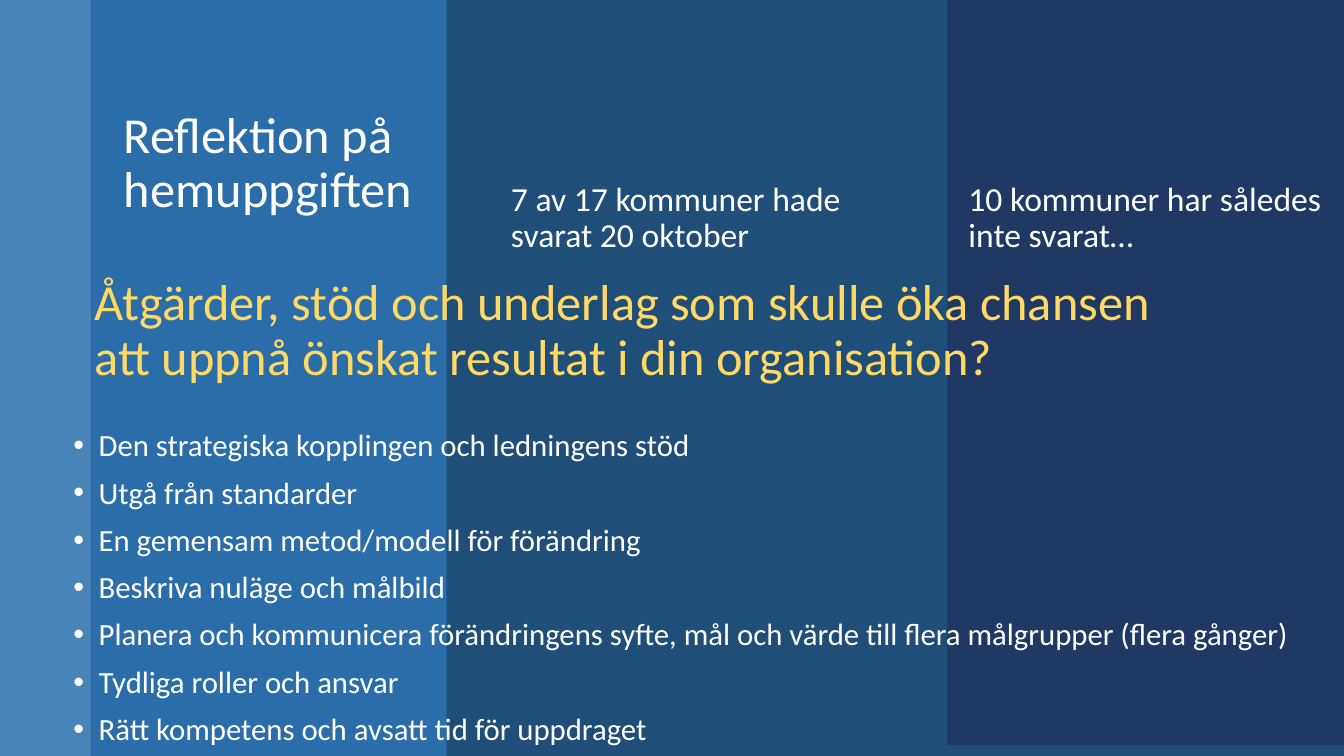
from dataclasses import dataclass

from lxml import etree
from pptx import Presentation
from pptx import util as u
from pptx.dml.color import RGBColor
from pptx.enum import shapes, text
from pptx.oxml import ns

Pt = u.Pt


@dataclass(frozen=True)
class Theme:
    font: str = "Calibri"
    back: str = "1F4E79"
    edge: str = "5B9BD5"
    main: str = "2E75B6"
    dark: str = "203864"
    ink: str = "FFFFFF"
    gold: str = "FFD966"
    head: int = 36
    note: int = 24
    item: int = 22


T = Theme()
ITEMS = [
    "Den strategiska kopplingen och ledningens stöd",
    "Utgå från standarder",
    "En gemensam metod/modell för förändring",
    "Beskriva nuläge och målbild",
    "Planera och kommunicera förändringens syfte, mål och värde till flera målgrupper (flera gånger)",
    "Tydliga roller och ansvar",
    "Rätt kompetens och avsatt tid för uppdraget",
]


def add_band(slide, box, color, alpha=100):
    band = slide.shapes.add_shape(shapes.MSO_SHAPE.RECTANGLE, *map(Pt, box))
    band.shadow.inherit = False
    band.line.fill.background()
    band.fill.solid()
    band.fill.fore_color.rgb = RGBColor.from_string(color)
    if alpha < 100:
        tint = band.fill._xPr.find(".//" + ns.qn("a:srgbClr"))
        etree.SubElement(tint, ns.qn("a:alpha"), val=str(alpha * 1000))


def add_dot(para, indent):
    props = para._p.get_or_add_pPr()
    props.set("marL", str(Pt(indent)))
    props.set("indent", str(-Pt(indent)))
    etree.SubElement(props, ns.qn("a:buFont"), typeface="Arial")
    etree.SubElement(props, ns.qn("a:buChar"), char="•")


def add_text(slide, box, *lines, size=T.note, color=T.ink, gap=10, dots=False):
    frame = slide.shapes.add_textbox(*map(Pt, box)).text_frame
    frame.word_wrap = True
    frame.vertical_anchor = text.MSO_ANCHOR.TOP
    for i, line in enumerate(lines):
        para = frame.paragraphs[0] if i == 0 else frame.add_paragraph()
        para.line_spacing = 0.9
        para.space_before = Pt(gap)
        if dots:
            add_dot(para, 18)
        run = para.add_run()
        run.text = line
        run.font.name = T.font
        run.font.size = Pt(size)
        run.font.color.rgb = RGBColor.from_string(color)


def add_title(slide, left, top, width, height):
    edge = 65.3
    add_band(slide, (left, top, edge, height), T.edge, 70)
    add_band(slide, (left + edge, top, width - edge, height), T.main, 80)
    add_text(slide, (left + 81.4, top + 75, 222.5, 354),
             "Reflektion på hemuppgiften", size=T.head, gap=0)


def add_count(slide, left, top, width, height):
    add_text(slide, (left + 38.9, top + 126.7, 269.3, 67.7),
             "7 av 17 kommuner hade svarat 20 oktober")


def add_rest(slide, left, top, width, height):
    add_band(slide, (left, top, width, height), T.dark)
    add_text(slide, (left + 7.9, top + 134.6, 269.3, 354),
             "10 kommuner har således inte svarat…")


def add_answer(slide, left, top, width, height):
    add_text(slide, (left + 15.1, top, 771.8, 87),
             "Åtgärder, stöd och underlag som skulle öka chansen "
             "att uppnå önskat resultat i din organisation?",
             size=T.head, color=T.gold)
    add_text(slide, (left, top + 109.4, width, height - 109.4),
             *ITEMS, size=T.item, dots=True)


def main():
    deck = Presentation()
    deck.slide_width, deck.slide_height = Pt(960), Pt(540)
    slide = deck.slides.add_slide(deck.slide_layouts[6])
    fill = slide.background.fill
    fill.solid()
    fill.fore_color.rgb = RGBColor.from_string(T.back)
    add_title(slide, 0, 0, 319, 540)
    add_count(slide, 319, 0, 358, 540)
    add_rest(slide, 676.8, -7.9, 285.1, 540)
    add_answer(slide, 45.4, 194.4, 921.6, 344.2)
    deck.save("out.pptx")


if __name__ == "__main__":
    main()
